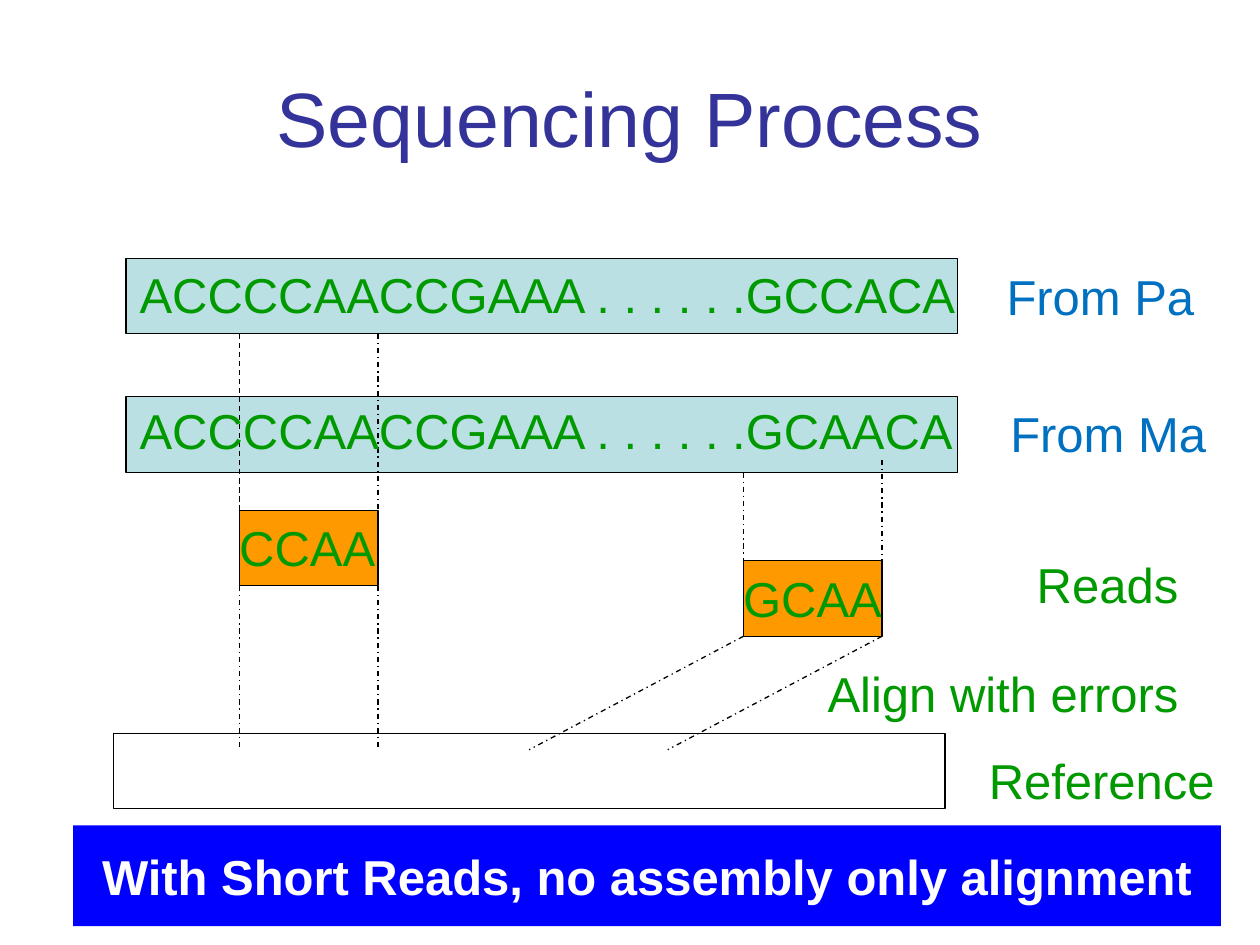
from dataclasses import dataclass

from lxml import etree
from pptx import Presentation
from pptx.dml.color import RGBColor
from pptx.enum.dml import MSO_LINE
from pptx.enum.shapes import MSO_CONNECTOR, MSO_SHAPE
from pptx.enum.text import MSO_ANCHOR, MSO_AUTO_SIZE, PP_ALIGN
from pptx.oxml.ns import qn
from pptx.util import Inches, Pt

DASH, DASH_DOT = MSO_LINE.DASH, MSO_LINE.DASH_DOT
RECTANGLE, STRAIGHT = MSO_SHAPE.RECTANGLE, MSO_CONNECTOR.STRAIGHT
MIDDLE, CENTER = MSO_ANCHOR.MIDDLE, PP_ALIGN.CENTER
FIT_SHAPE = MSO_AUTO_SIZE.SHAPE_TO_FIT_TEXT

BLACK, WHITE, GREEN, BLUE = "000000", "FFFFFF", "009900", "0070C0"
TEAL, ORANGE, NAVY, BANNER_BLUE = "BBE0E3", "FF9900", "333399", "0000FF"
BAR_HEIGHT, LABEL_HEIGHT = 0.6, 0.57
STRAND_WIDTH, READ_WIDTH = 6.6, 1.1
PA_TOP, MA_TOP, REFERENCE_TOP = 2.05, 3.15, 5.82
ALIGNED_Y = 5.95


@dataclass
class Bar:
    left: float
    top: float
    width: float
    fill: str
    height: float = BAR_HEIGHT
    outline: str | None = BLACK


@dataclass
class Guide:
    start: tuple[float, float]
    end: tuple[float, float]
    dash: MSO_LINE = DASH_DOT


@dataclass
class Label:
    text: str
    left: float
    top: float
    width: float
    color: str = GREEN


def rgb(value: str) -> RGBColor:
    return RGBColor.from_string(value)


def format_paragraph(paragraph, color: str, size: int = 28, bold: bool = False) -> None:
    font = paragraph.font
    font.name, font.size, font.bold = "Arial", Pt(size), bold
    font.color.rgb = rgb(color)


def draw_bar(slide, bar: Bar):
    shape = slide.shapes.add_shape(
        RECTANGLE, Inches(bar.left), Inches(bar.top), Inches(bar.width), Inches(bar.height))
    shape.shadow.inherit = False
    shape.fill.solid()
    shape.fill.fore_color.rgb = rgb(bar.fill)
    if bar.outline:
        shape.line.color.rgb = rgb(bar.outline)
        shape.line.width = Pt(0.75)
    else:
        shape.line.fill.background()
    return shape


def draw_guide(slide, guide: Guide) -> None:
    points = [Inches(value) for value in (*guide.start, *guide.end)]
    connector = slide.shapes.add_connector(STRAIGHT, *points)
    connector.line.color.rgb = rgb(BLACK)
    connector.line.width = Pt(0.75)
    connector.line.dash_style = guide.dash
    properties = connector._element.find(qn("p:spPr"))
    etree.SubElement(properties, qn("a:effectLst"))


def draw_label(slide, label: Label) -> None:
    box = slide.shapes.add_textbox(
        Inches(label.left), Inches(label.top), Inches(label.width), Inches(LABEL_HEIGHT))
    frame = box.text_frame
    frame.word_wrap = False
    frame.auto_size = FIT_SHAPE
    frame.text = label.text
    format_paragraph(frame.paragraphs[0], label.color)


def draw_title(slide, text: str) -> None:
    title = slide.shapes.title
    title.left, title.top = Inches(0.5), Inches(0.3)
    title.width, title.height = Inches(9), Inches(1.25)
    title.text_frame.text = text
    title.text_frame.vertical_anchor = MIDDLE
    title.text_frame.paragraphs[0].alignment = CENTER
    format_paragraph(title.text_frame.paragraphs[0], NAVY, size=44)


def draw_banner(slide, text: str) -> None:
    banner = draw_bar(slide, Bar(0.58, 6.55, 9.11, BANNER_BLUE, height=0.8, outline=None))
    frame = banner.text_frame
    frame.text = text
    frame.vertical_anchor = MIDDLE
    frame.paragraphs[0].alignment = CENTER
    format_paragraph(frame.paragraphs[0], WHITE, bold=True)


def main() -> None:
    deck = Presentation()
    deck.slide_width, deck.slide_height = Inches(10), Inches(7.5)
    slide = deck.slides.add_slide(deck.slide_layouts[5])
    draw_title(slide, "Sequencing Process")

    pa_read = Bar(1.9, 4.05, READ_WIDTH, ORANGE)
    ma_read = Bar(5.9, 4.45, READ_WIDTH, ORANGE)
    bars = [
        Bar(1, PA_TOP, STRAND_WIDTH, TEAL),
        Bar(1, MA_TOP, STRAND_WIDTH, TEAL),
        pa_read,
        ma_read,
        Bar(0.9, REFERENCE_TOP, STRAND_WIDTH, WHITE),
    ]
    for bar in bars:
        draw_bar(slide, bar)

    # Each read is tied to its strand above and to the reference below.
    pa_bottom = PA_TOP + BAR_HEIGHT
    guides = []
    for x, dash, ma_start in ((0, DASH, 3.75), (READ_WIDTH, DASH_DOT, 3.65)):
        pa_x, ma_x = pa_read.left + x, ma_read.left + x
        guides += [
            Guide((pa_x, pa_bottom), (pa_x, pa_read.top), dash),
            Guide((pa_x, pa_read.top + BAR_HEIGHT), (pa_x, ALIGNED_Y)),
            Guide((ma_x, ma_start), (ma_x, ma_start + 0.9)),
            Guide((ma_x, ma_read.top + BAR_HEIGHT), (ma_x - 1.7, ALIGNED_Y)),
        ]
    for guide in guides:
        draw_guide(slide, guide)

    draw_banner(slide, "With Short Reads, no assembly only alignment")

    labels = [
        Label("ACCCCAACCGAAA . . . . . .GCCACA", 1.01, 2.05, 6.74),
        Label("ACCCCAACCGAAA . . . . . .GCAACA", 1.01, 3.13, 6.72),
        Label("CCAA", 1.8, 4.06, 1.29),
        Label("GCAA", 5.8, 4.46, 1.31),
        Label("From Pa", 7.89, 2.07, 1.71, BLUE),
        Label("From Ma", 7.92, 3.15, 1.78, BLUE),
        Label("Reads", 8.13, 4.35, 1.34),
        Label("Align with errors", 6.47, 5.22, 3.02),
        Label("Reference", 7.75, 5.91, 2),
    ]
    for label in labels:
        draw_label(slide, label)

    deck.save("out.pptx")


if __name__ == "__main__":
    main()
